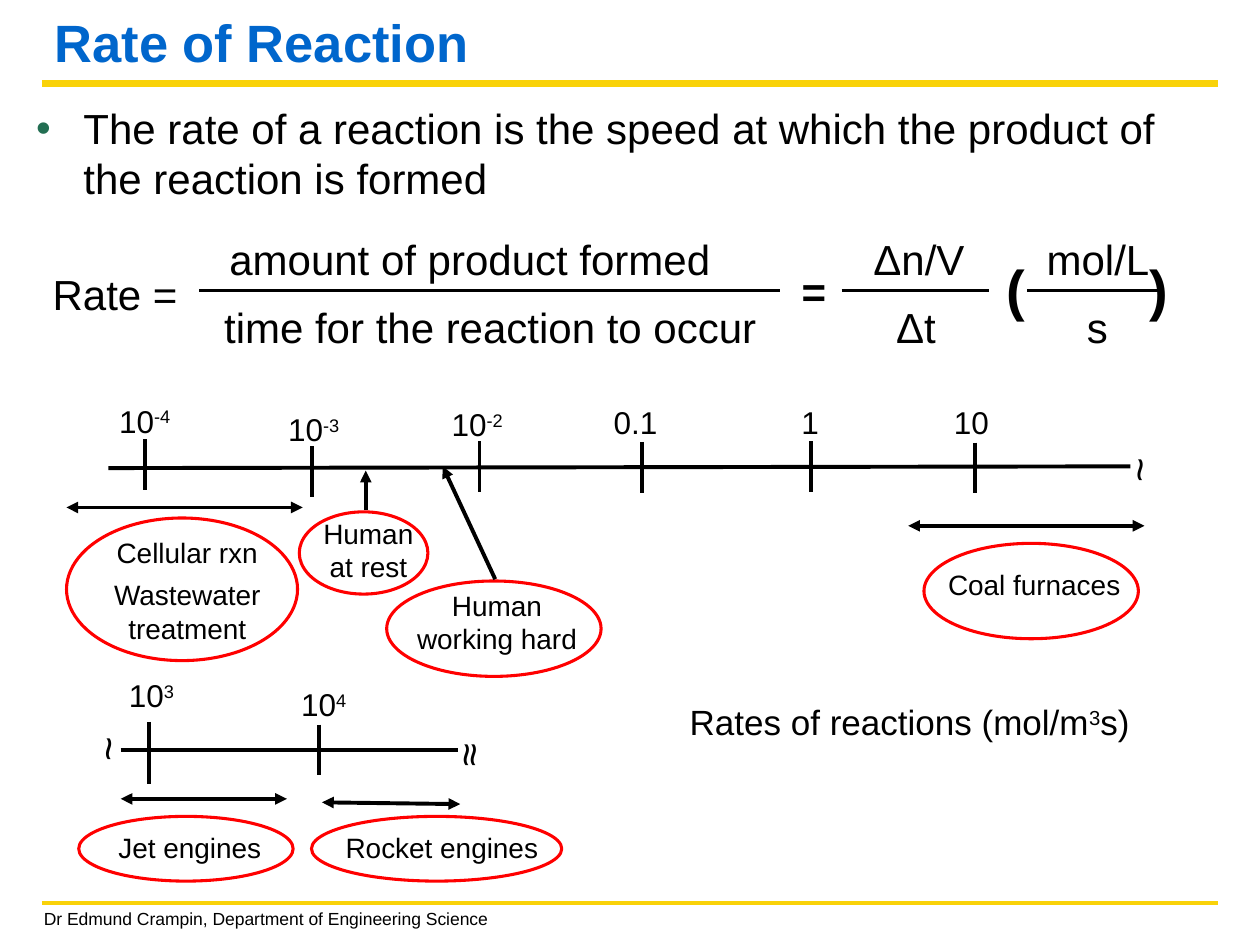
from lxml import etree
from pptx import Presentation
from pptx.dml.color import RGBColor
from pptx.enum.shapes import MSO_CONNECTOR, MSO_SHAPE
from pptx.enum.text import MSO_ANCHOR, MSO_AUTO_SIZE, PP_ALIGN
from pptx.oxml.ns import qn
from pptx.util import Pt

LEFT, MID = PP_ALIGN.LEFT, PP_ALIGN.CENTER
TOP, BASE = MSO_ANCHOR.TOP, MSO_ANCHOR.BOTTOM
FIXED = MSO_AUTO_SIZE.NONE
LINE, OVAL = MSO_CONNECTOR.STRAIGHT, MSO_SHAPE.OVAL
FONT = "Arial"
HUES = {"ink": "000000", "title": "0066CC", "rule": "F9D209",
        "ring": "FF0000", "dot": "226E52"}


def tint(name):
    """Return the named colour."""
    return RGBColor.from_string(HUES[name])


def add_run(para, text, size, hue="ink", bold=False, sup=False):
    """Add one formatted run to a paragraph."""
    run = para.add_run()
    run.text = text
    font = run.font
    font.name, font.size, font.bold = FONT, Pt(size), bold
    font.color.rgb = tint(hue)
    if sup:
        run._r.get_or_add_rPr().set("baseline", "30000")


def place(shape, box):
    """Move and size a shape."""
    shape.left, shape.top, shape.width, shape.height = map(Pt, box)


def add_text(slide, box, paras, size, align=LEFT, bold=False, gap=0,
             anchor=TOP, turn=0):
    """Add a text box; every second run of a paragraph is raised."""
    shape = slide.shapes.add_textbox(*map(Pt, box))
    shape.rotation = turn
    frame = shape.text_frame
    frame.word_wrap, frame.vertical_anchor = True, anchor
    for i, runs in enumerate(paras):
        para = frame.add_paragraph() if i else frame.paragraphs[0]
        para.alignment = align
        para.space_before = Pt(gap if i else 0)
        for j, text in enumerate(runs):
            add_run(para, text, size, bold=bold, sup=j % 2 == 1)


def add_line(slide, ends, width=2.25, hue="ink", tips=()):
    """Add a line with arrow tips at the named ends."""
    line = slide.shapes.add_connector(LINE, *map(Pt, ends))
    line.line.color.rgb = tint(hue)
    line.line.width = Pt(width)
    ln = line.line._get_or_add_ln()
    for tip in tips:
        etree.SubElement(ln, qn("a:" + tip)).set("type", "triangle")
    etree.SubElement(line._element.spPr, qn("a:effectLst"))


def add_ring(slide, box):
    """Add a hollow ellipse."""
    ring = slide.shapes.add_shape(OVAL, *map(Pt, box))
    ring.shadow.inherit = False
    ring.fill.background()
    ring.line.color.rgb = tint("ring")
    ring.line.width = Pt(1.75)


def add_case(slide, ring, box, paras, ends, tips):
    """Add a ringed example with its arrow on the scale."""
    add_text(slide, box, [[text] for text in paras], 16, MID, gap=5)
    add_ring(slide, ring)
    add_line(slide, ends, tips=tips)


def add_tick(slide, x, top, foot, box, runs, align=LEFT):
    """Add a scale tick and its label."""
    add_line(slide, (x, top, x, foot))
    add_text(slide, box, [runs], 18, align)


def add_head(slide):
    """Fill the title and the bullet, and draw the page rules."""
    title, body = slide.shapes.title, slide.placeholders[1]
    place(title, (24, 6, 672, 39.5))
    place(body, (13.5, 55, 672, 207))
    for shape in (title, body):
        shape.text_frame.auto_size = FIXED
    para = title.text_frame.paragraphs[0]
    para.alignment, para.line_spacing = LEFT, 0.9
    add_run(para, "Rate of Reaction", 30, "title", True)
    para = body.text_frame.paragraphs[0]
    para.space_before = Pt(0)
    add_run(para, "The rate of a reaction is the speed at which the "
            "product of the reaction is formed", 24)
    props = para._p.get_or_add_pPr()
    props.set("marL", str(Pt(27)))
    props.set("indent", str(-Pt(27)))
    hue = etree.SubElement(props, qn("a:buClr"))
    etree.SubElement(hue, qn("a:srgbClr")).set("val", HUES["dot"])
    etree.SubElement(props, qn("a:buFont")).set("typeface", FONT)
    etree.SubElement(props, qn("a:buChar")).set("char", "•")
    for y, width in ((48, 4), (516, 2)):
        add_line(slide, (24, y, 696, y), width, "rule")
    add_text(slide, (18, 515, 334, 19.5),
             [["Dr Edmund Crampin, Department of Engineering Science"]],
             10, anchor=BASE)


def add_rate(slide):
    """Build the rate formula."""
    parts = (
        (23, 150, 91, "Rate ="),
        (124, 130, 320, "amount of product formed"),
        (121, 169, 340, "time for the reaction to occur"),
        (492, 130, 80, "Δn/V"), (505, 169, 60, "Δt"),
        (591, 130, 80, "mol/L"), (614, 169, 40, "s"),
    )
    for x, y, width, text in parts:
        add_text(slide, (x, y, width, 36), [[text]], 24)
    add_text(slide, (451, 148, 32, 36), [["="]], 24, bold=True)
    for x, text in ((568, "("), (650, ")")):
        add_text(slide, (x, 142, 30, 45), [[text]], 32, bold=True)
    for start, end, width in ((114, 446, 2), (481, 565, 2.25),
                              (587, 662, 2.25)):
        add_line(slide, (start, 166, end, 166), width)


def add_scale(slide):
    """Draw both parts of the rate scale."""
    add_line(slide, (62, 267.5, 646, 266.5))
    add_line(slide, (69, 428.5, 262, 428.5))
    ticks = (
        (83, 251, 61, 226, ("10", "-4")), (178.5, 255, 157.5, 231, ("10", "-3")),
        (274, 252, 251, 228, ("10", "-2")), (367, 252.5, 343.5, 227, ("0.1",)),
        (557, 253, 538, 227, ("10",)), (182.5, 414, 165, 388, ("10", "4")),
    )
    for x, top, left, y, runs in ticks:
        add_tick(slide, x, top, top + 29, (left, y, 51, 29), runs)
    add_tick(slide, 463.5, 252, 281, (443, 227, 40, 29), ("1",), MID)
    add_tick(slide, 85, 412.5, 448, (66.5, 383, 51, 29), ("10", "3"))
    for box in ((636, 250.5, 28, 36), (61, 395.5, 28, 65),
                (263.5, 373, 60, 85), (265.5, 399, 28, 65)):
        add_text(slide, box, [["~"]], 24, turn=270)
    add_text(slide, (387, 397, 293, 31),
             [["Rates of reactions (mol/m", "3", "s)"]], 20)


def add_cases(slide):
    """Add the examples along the scale."""
    both, end = ("headEnd", "tailEnd"), ("tailEnd",)
    cases = (
        ((38, 296, 132, 81.5), (36, 302.5, 142, 70.5),
         ("Cellular rxn", "Wastewater treatment"), (38, 290, 173, 290), both),
        ((171, 292.5, 73.5, 47), (177, 291.5, 67, 46),
         ("Human at rest",), (209, 291.5, 209, 269), end),
        ((221, 332, 122.5, 54.5), (223, 332.5, 122, 46),
         ("Human working hard",), (283, 331, 253, 266.5), end),
        ((528, 310.5, 122.5, 54.5), (530, 321, 122, 27),
         ("Coal furnaces",), (519, 300.5, 654, 300.5), both),
        ((45, 466.5, 122.5, 37), (47.5, 471, 122, 27),
         ("Jet engines",), (69, 456.5, 164, 456.5), both),
        ((178, 466.5, 143, 37), (181, 471, 143, 27),
         ("Rocket engines",), (184, 458.5, 263, 459.5), both),
    )
    for case in cases:
        add_case(slide, *case)


def main():
    """Build and save the slide."""
    deck = Presentation()
    deck.slide_width, deck.slide_height = Pt(720), Pt(540)
    slide = deck.slides.add_slide(deck.slide_layouts[1])
    for add in (add_head, add_rate, add_cases, add_scale):
        add(slide)
    deck.save("out.pptx")


if __name__ == "__main__":
    main()
